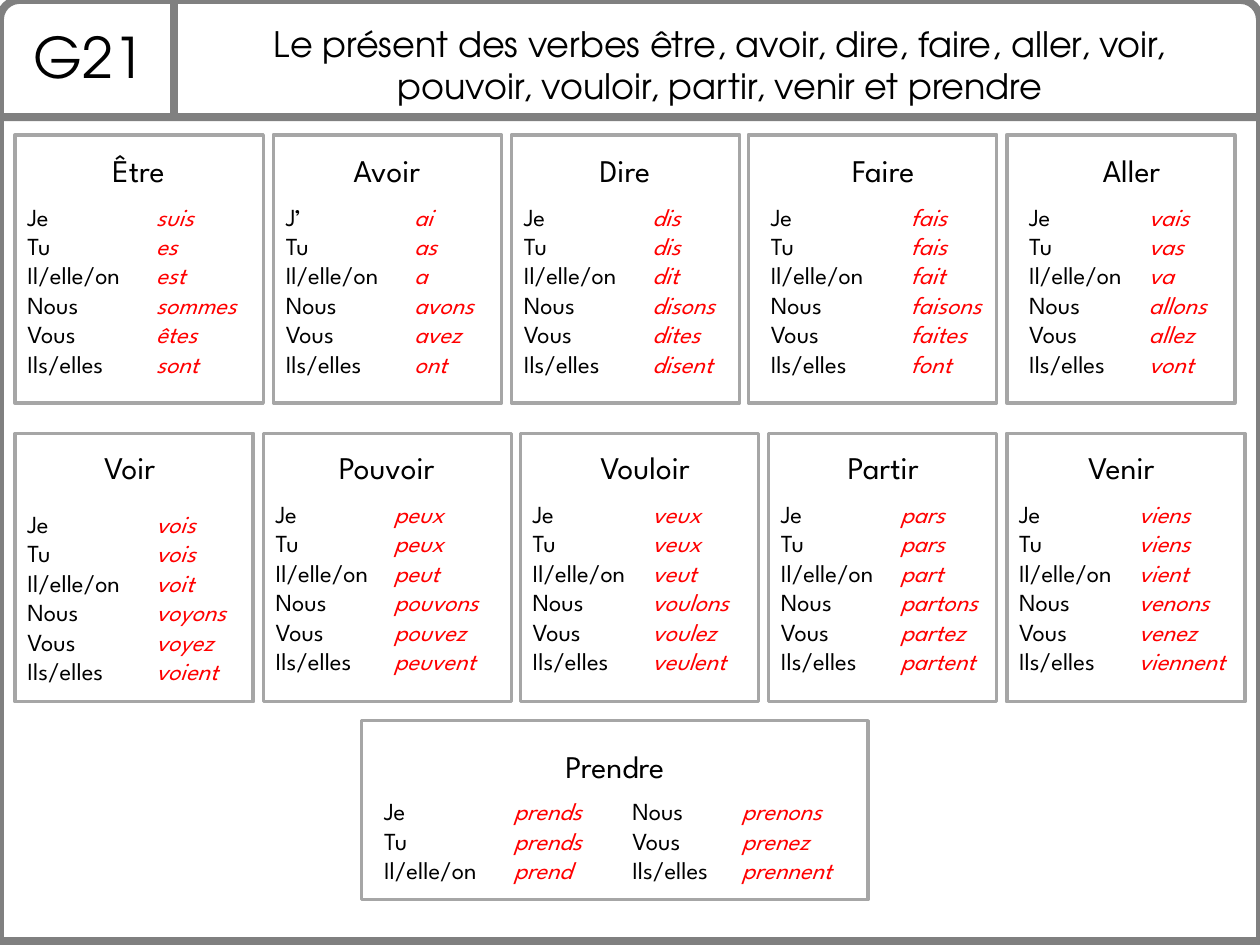
import pptx
import pptx.dml.color
import pptx.enum.shapes
import pptx.enum.text
import pptx.oxml
import pptx.util
from pptx.util import Inches

SHAPES = pptx.enum.shapes.MSO_SHAPE
CENTER = pptx.enum.text.PP_ALIGN.CENTER
LEFT = pptx.enum.text.PP_ALIGN.LEFT
HEADING_FONT = "TeX Gyre Adventor"
BODY_FONT = "League Spartan"


def color(hex_string):
    return pptx.dml.color.RGBColor.from_string(hex_string)


def add_text(box, lines, size, font=BODY_FONT, alignment=LEFT, hex_color="000000", italic=False):
    """Add a text box at box (left, top, width, height) with one paragraph per line."""
    text_frame = slide.shapes.add_textbox(*map(Inches, box)).text_frame
    text_frame.word_wrap = True
    text_frame.auto_size = pptx.enum.text.MSO_AUTO_SIZE.SHAPE_TO_FIT_TEXT
    for index, line in enumerate(lines):
        paragraph = text_frame.add_paragraph() if index else text_frame.paragraphs[0]
        paragraph.alignment = alignment
        run = paragraph.add_run()
        run.text = line
        run.font.name = font
        run.font.size = pptx.util.Pt(size)
        run.font.italic = italic
        run.font.color.rgb = color(hex_color)


presentation = pptx.Presentation()
presentation.slide_width = Inches(10)
presentation.slide_height = Inches(7.5)
slide = presentation.slides.add_slide(presentation.slide_layouts[6])

# Page frame and header
for preset, top, height in [
    (SHAPES.ROUND_2_SAME_RECTANGLE, 0, 0.93),
    (SHAPES.RECTANGLE, 0.93, 6.54),
]:
    frame = slide.shapes.add_shape(preset, 0, Inches(top), Inches(10), Inches(height))
    frame.shadow.inherit = False
    frame.fill.background()
    frame.line.color.rgb = color("808080")
    frame.line.width = pptx.util.Pt(4.5)

divider = slide.shapes.add_connector(
    pptx.enum.shapes.MSO_CONNECTOR.STRAIGHT, Inches(1.38), Inches(-0.01), Inches(1.38), Inches(0.93)
)
divider.line.color.rgb = color("808080")
divider.line.width = pptx.util.Pt(4.5)
divider.element.spPr.append(pptx.oxml.parse_xml(
    '<a:effectLst xmlns:a="http://schemas.openxmlformats.org/drawingml/2006/main"/>'
))

add_text((0.12, 0.13, 1.18, 0.64), ["G21"], 32, HEADING_FONT, CENTER)
add_text(
    (1.54, 0.13, 8.35, 0.77),
    ["Le présent des verbes être, avoir, dire, faire, aller, voir, "
     "pouvoir, vouloir, partir, venir et prendre"],
    20, HEADING_FONT, CENTER,
)

# Each row: top, height, title top, and its cards.
# Each card: verb, left, width, title centre, text top, columns, forms.
# Each column: pronoun left, pronoun width, form left, form width.
rows = [
    (1.07, 2.13, 1.15, [
        ("Être", 0.12, 1.97, 1.10, 1.55, [(0.12, 1.1, 1.14, 1.02)], "suis es est sommes êtes sont"),
        ("Avoir", 2.17, 1.81, 3.07, 1.55, [(2.17, 1.1, 3.19, 0.87)], "ai as a avons avez ont"),
        ("Dire", 4.06, 1.81, 4.96, 1.55, [(4.06, 1.1, 5.08, 0.87)], "dis dis dit disons dites disent"),
        ("Faire", 5.94, 1.97, 7.01, 1.55, [(6.02, 1.1, 7.13, 0.87)], "fais fais fait faisons faites font"),
        ("Aller", 7.99, 1.81, 8.98, 1.55, [(8.07, 1.1, 9.02, 0.87)], "vais vas va allons allez vont"),
    ]),
    (3.44, 2.13, 3.51, [
        ("Voir", 0.12, 1.89, 1.03, 3.99, [(0.12, 1.1, 1.14, 0.87)], "vois vois voit voyons voyez voient"),
        ("Pouvoir", 2.09, 1.97, 3.07, 3.91, [(2.09, 1.1, 3.03, 1.02)], "peux peux peut pouvons pouvez peuvent"),
        ("Vouloir", 4.13, 1.89, 5.12, 3.91, [(4.13, 1.1, 5.08, 0.94)], "veux veux veut voulons voulez veulent"),
        ("Partir", 6.10, 1.81, 7.01, 3.91, [(6.10, 1.1, 7.05, 0.94)], "pars pars part partons partez partent"),
        ("Venir", 7.99, 1.89, 8.90, 3.91, [(7.99, 1.1, 8.94, 1.06)], "viens viens vient venons venez viennent"),
    ]),
    (5.72, 1.42, 5.88, [
        ("Prendre", 2.87, 4.02, 4.88, 6.27, [(2.95, 1.1, 3.98, 1.02), (4.92, 0.94, 5.79, 1.1)],
         "prends prends prend prenons prenez prennent"),
    ]),
]

for top, height, title_top, cards in rows:
    for verb, left, width, title_center, text_top, columns, forms in cards:
        card = slide.shapes.add_shape(
            SHAPES.RECTANGLE, Inches(left), Inches(top), Inches(width), Inches(height)
        )
        card.shadow.inherit = False
        card.fill.solid()
        card.fill.fore_color.rgb = color("FFFFFF")
        card.line.color.rgb = color("A6A6A6")
        card.line.width = pptx.util.Pt(2)

        add_text((title_center - 0.75, title_top, 1.5, 0.4), [verb], 18, alignment=CENTER)

        first_pronoun = "J’" if verb == "Avoir" else "Je"
        pronouns = [first_pronoun, "Tu", "Il/elle/on", "Nous", "Vous", "Ils/elles"]
        count = len(pronouns) // len(columns)
        text_height = 0.1 + 0.235 * count
        for index, (pronoun_left, pronoun_width, form_left, form_width) in enumerate(columns):
            persons = slice(index * count, (index + 1) * count)
            add_text((pronoun_left, text_top, pronoun_width, text_height), pronouns[persons], 14)
            add_text((form_left, text_top, form_width, text_height), forms.split()[persons], 14,
                     hex_color="FF0000", italic=True)

presentation.save("out.pptx")
